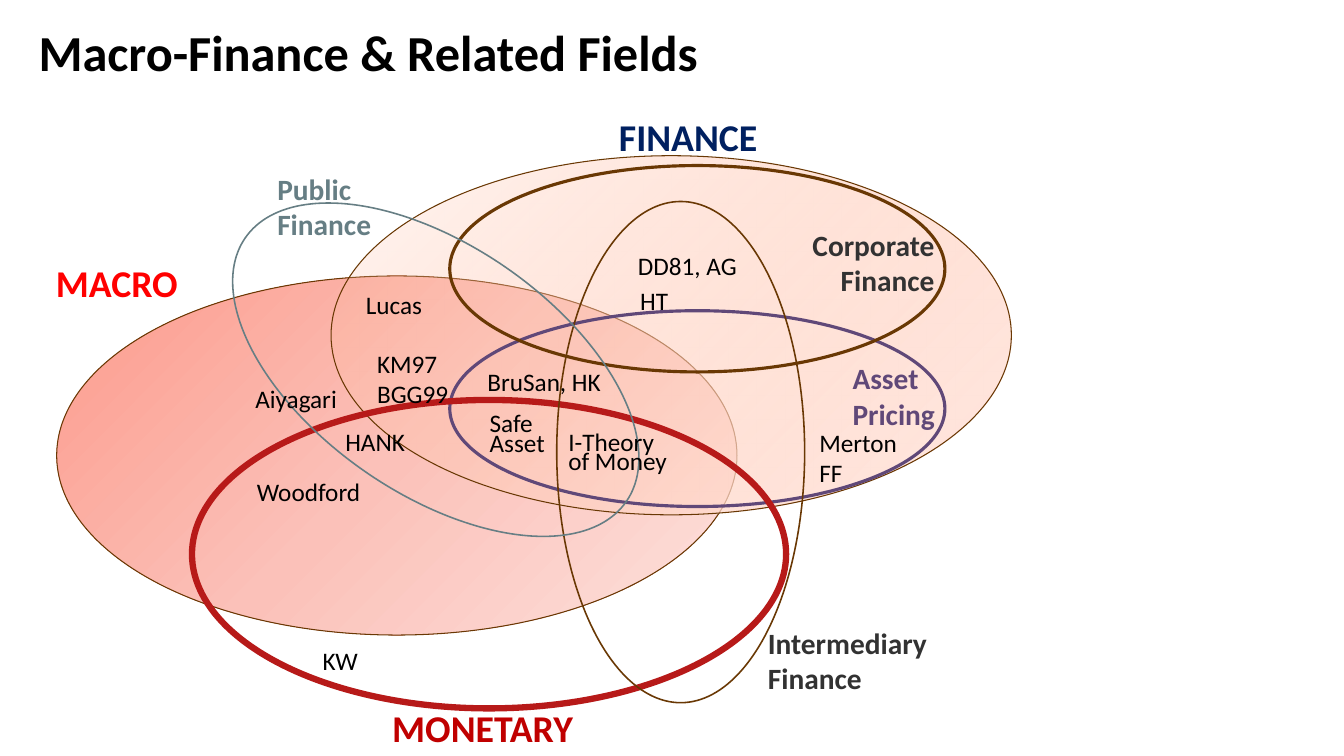
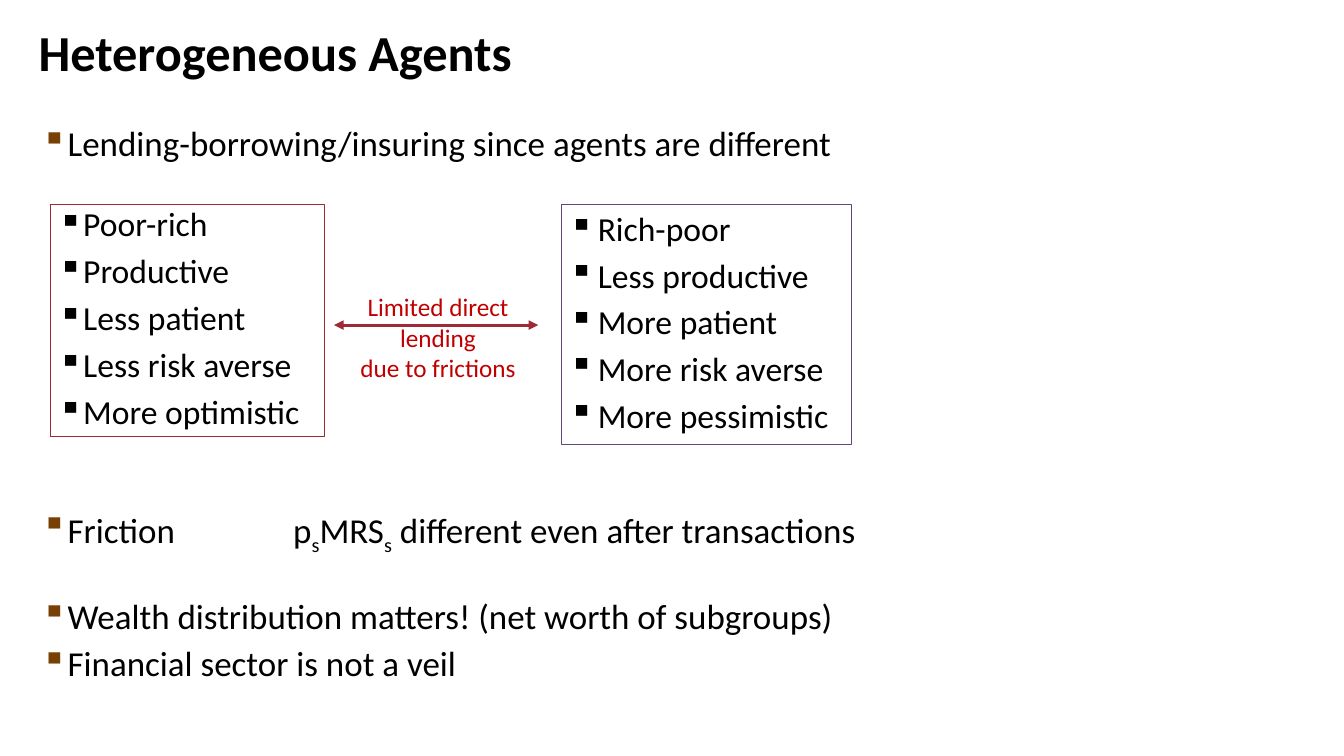
import pptx
import pptx.util
import pptx.dml.color
import pptx.enum.shapes
import pptx.enum.text
import pptx.oxml
import pptx.oxml.ns
from lxml import etree

Inches = pptx.util.Inches
Pt = pptx.util.Pt
Align = pptx.enum.text.PP_ALIGN
Anchor = pptx.enum.text.MSO_ANCHOR
Shape = pptx.enum.shapes.MSO_SHAPE
qn = pptx.oxml.ns.qn

FONT = "Calibri"
COLORS = {
    "white": "FFFFFF",
    "text": "000000",
    "field": "323232",
    "brown": "693804",
    "bullet": "784004",
    "purple": "604878",
    "slate": "667E84",
    "macro": "FF0000",
    "monetary": "C00000",
    "monetary_ring": "B71A19",
    "finance": "002060",
    "agents": "9F2936",
}
MACRO_GRADIENT = [(0, "FC9A8B", 100), (50, "FBC1B9", 100), (100, "FDE1DD", 100)]
FINANCE_GRADIENT = [(0, "FFB496", 10), (100, "FFE7E0", 100)]


def rgb(name):
    return pptx.dml.color.RGBColor.from_string(COLORS[name])


def format_runs(paragraph, size, color="text", bold=False):
    for run in paragraph.runs:
        run.font.name = FONT
        run.font.size = Pt(size)
        run.font.bold = bold
        run.font.color.rgb = rgb(color)


def add_titled_slide(deck, heading):
    slide = deck.slides.add_slide(deck.slide_layouts[5])
    title = slide.shapes.title
    title.left, title.top = Inches(0.41), Inches(0.11)
    title.width, title.height = Inches(16.95), Inches(1.25)
    title.text_frame.text = heading
    title.text_frame.vertical_anchor = Anchor.MIDDLE
    paragraph = title.text_frame.paragraphs[0]
    paragraph.alignment = Align.LEFT
    paragraph.line_spacing = 0.9
    format_runs(paragraph, 48, bold=True)
    return slide


def set_gradient(shape, stops):
    fill = pptx.oxml.parse_xml(
        f'<a:gradFill {pptx.oxml.ns.nsdecls("a")} rotWithShape="1">'
        '<a:gsLst/><a:lin ang="2700000" scaled="0"/></a:gradFill>'
    )
    for position, color, opacity in stops:
        stop = etree.SubElement(fill[0], qn("a:gs"), pos=str(position * 1000))
        tone = etree.SubElement(stop, qn("a:srgbClr"), val=color)
        if opacity < 100:
            etree.SubElement(tone, qn("a:alpha"), val=str(opacity * 1000))
    properties = shape.fill._xPr
    properties.find(qn("a:prstGeom")).addnext(fill)


def add_outlined(slide, kind, box, color, weight):
    shape = slide.shapes.add_shape(kind, *map(Inches, box))
    shape.shadow.inherit = False
    shape.line.color.rgb = rgb(color)
    shape.line.width = Pt(weight)
    return shape


def add_ellipse(slide, box, color, weight, rotation=0, gradient=None):
    ellipse = add_outlined(slide, Shape.OVAL, box, color, weight)
    ellipse.rotation = rotation
    if gradient:
        set_gradient(ellipse, gradient)
    else:
        ellipse.fill.background()


def add_label(slide, text, left, top, width, size=24, color="text", bold=False,
              align=Align.LEFT, spacing=None, wrap=False):
    height = 0.1 + (text.count("\n") + 1) * size * 1.2 / 72
    label = slide.shapes.add_textbox(*map(Inches, (left, top, width, height)))
    frame = label.text_frame
    frame.text = text
    frame.word_wrap = wrap
    frame.auto_size = pptx.enum.text.MSO_AUTO_SIZE.SHAPE_TO_FIT_TEXT
    for paragraph in frame.paragraphs:
        paragraph.alignment = align
        if spacing:
            paragraph.line_spacing = Pt(spacing)
        format_runs(paragraph, size, color, bold)


def set_bullet(paragraph, indent, color, tab=None):
    properties = paragraph._p.get_or_add_pPr()
    properties.set("marL", str(Inches(indent)))
    properties.set("indent", str(-Inches(indent)))
    bullet_color = etree.SubElement(properties, qn("a:buClr"))
    etree.SubElement(bullet_color, qn("a:srgbClr"), val=COLORS[color])
    etree.SubElement(properties, qn("a:buChar"), char="▪")
    if tab:
        tabs = etree.SubElement(properties, qn("a:tabLst"))
        etree.SubElement(tabs, qn("a:tab"), pos=str(Inches(tab)), algn="l")


def add_agent_box(slide, traits, box, color, indent, line_spacing, gap):
    agent = add_outlined(slide, Shape.RECTANGLE, box, color, 1)
    agent.fill.solid()
    agent.fill.fore_color.rgb = rgb("white")
    frame = agent.text_frame
    frame.text = "\n".join(traits)
    frame.vertical_anchor = Anchor.TOP
    for row, paragraph in enumerate(frame.paragraphs):
        set_bullet(paragraph, indent, "text")
        paragraph.alignment = Align.LEFT
        paragraph.line_spacing = line_spacing
        paragraph.space_before = Pt(gap if row else 0)
        format_runs(paragraph, 32)


def add_points(slide, points):
    box = slide.shapes.add_textbox(*map(Inches, (0.45, 1.67, 16.95, 7.67)))
    frame = box.text_frame
    frame.word_wrap = True
    for row, (pieces, gap, tab) in enumerate(points):
        paragraph = frame.add_paragraph() if row else frame.paragraphs[0]
        set_bullet(paragraph, 0.33, "bullet", tab)
        paragraph.line_spacing = 0.8
        paragraph.space_before = Pt(gap)
        for index, piece in enumerate(pieces):
            run = paragraph.add_run()
            run.text = piece
            if index % 2:
                run.font._element.set("baseline", "-25000")
        format_runs(paragraph, 33.3)


def add_double_arrow(slide, left, right, y, color):
    arrow = slide.shapes.add_connector(
        pptx.enum.shapes.MSO_CONNECTOR.STRAIGHT,
        Inches(left), Inches(y), Inches(right), Inches(y))
    arrow.line.color.rgb = rgb(color)
    arrow.line.width = Pt(3)
    line = arrow.line._get_or_add_ln()
    for end in ("a:headEnd", "a:tailEnd"):
        etree.SubElement(line, qn(end), type="triangle")
    etree.SubElement(arrow._element.spPr, qn("a:effectLst"))


def build_fields(deck):
    slide = add_titled_slide(deck, "Macro-Finance & Related Fields")
    add_ellipse(slide, (0.75, 3.65, 9, 4.75), "brown", 1, gradient=MACRO_GRADIENT)
    add_ellipse(slide, (4.38, 2.06, 9, 4.75), "brown", 1, gradient=FINANCE_GRADIENT)
    for box, color, weight, rotation in [
        ((5.95, 4.11, 6.55, 2.59), "purple", 3, 0),
        ((5.95, 2.19, 6.55, 2.73), "brown", 3, 0),
        ((2.54, 5.29, 7.86, 4.08), "monetary_ring", 6, 0),
        ((5.69, 4.34, 6.63, 3.28), "brown", 1.5, 270),
        ((2.7, 3.25, 6.13, 3.28), "slate", 1.5, 214.7),
    ]:
        add_ellipse(slide, box, color, weight, rotation)

    for text, left, top, width, color in [
        ("MACRO", 0.64, 3.38, 1.83, "macro"),
        ("MONETARY", 5.09, 9.27, 2.62, "monetary"),
        ("FINANCE", 8.09, 1.45, 2.05, "finance"),
    ]:
        add_label(slide, text, left, top, width, 36, color, True)

    for text, left, top, width, color, align in [
        ("Asset\nPricing", 11.18, 4.72, 1.3, "purple", Align.LEFT),
        ("Corporate\nFinance", 10.63, 2.95, 1.83, "field", Align.RIGHT),
        ("Intermediary\nFinance", 10.06, 8.22, 2.33, "field", Align.LEFT),
        ("Public\nFinance", 3.57, 2.21, 1.46, "slate", Align.LEFT),
    ]:
        add_label(slide, text, left, top, width, 28, color, True, align)

    for text, left, top, width in [
        ("Merton\nFF", 10.74, 5.6, 1.24),
        ("Aiyagari", 3.28, 5.02, 1.29),
        ("HANK", 4.47, 5.59, 1),
        ("Lucas", 4.74, 3.78, 0.95),
        ("Woodford", 3.3, 6.25, 1.58),
        ("KW", 4.17, 8.49, 0.67),
        ("KM97\nBGG99", 4.89, 4.56, 1.15),
        ("DD81, AG", 8.34, 3.26, 1.52),
        ("BruSan, HK", 6.35, 4.8, 1.72),
        ("HT", 8.37, 3.73, 0.58),
    ]:
        add_label(slide, text, left, top, width)
    add_label(slide, "Safe\nAsset", 6.38, 5.47, 0.94, spacing=19)
    add_label(slide, "I-Theory\nof Money", 7.42, 5.72, 1.52, spacing=19)


def build_agents(deck):
    slide = add_titled_slide(deck, "Heterogeneous Agents")
    add_points(slide, [
        (["Lending-borrowing/insuring since agents are different"], 0, None),
        (["Friction\tp", "s", "MRS", "s", " different even after transactions"], 333, 3.33),
        (["Wealth distribution matters! (net worth of subgroups)"], 48.5, None),
        (["Financial sector is not a veil"], 13.3, None),
    ])
    add_agent_box(
        slide,
        ["Poor-rich", "Productive", "Less patient", "Less risk averse", "More optimistic"],
        (0.67, 2.7, 3.62, 3.08), "agents", 0.25, 0.9, 10)
    add_agent_box(
        slide,
        ["Rich-poor", "Less productive", "More patient", "More risk averse", "More pessimistic"],
        (7.43, 2.7, 3.83, 3.18), "purple", 0.38, 1, 6)
    add_label(slide, "Limited direct lending\ndue to frictions", 4.23, 3.81, 3.13,
              color="monetary", align=Align.CENTER, wrap=True)
    add_double_arrow(slide, 4.42, 7.12, 4.3, "agents")


def main():
    deck = pptx.Presentation()
    deck.slide_width, deck.slide_height = Inches(17.78), Inches(10)
    build_fields(deck)
    build_agents(deck)
    deck.save("out.pptx")


if __name__ == "__main__":
    main()
